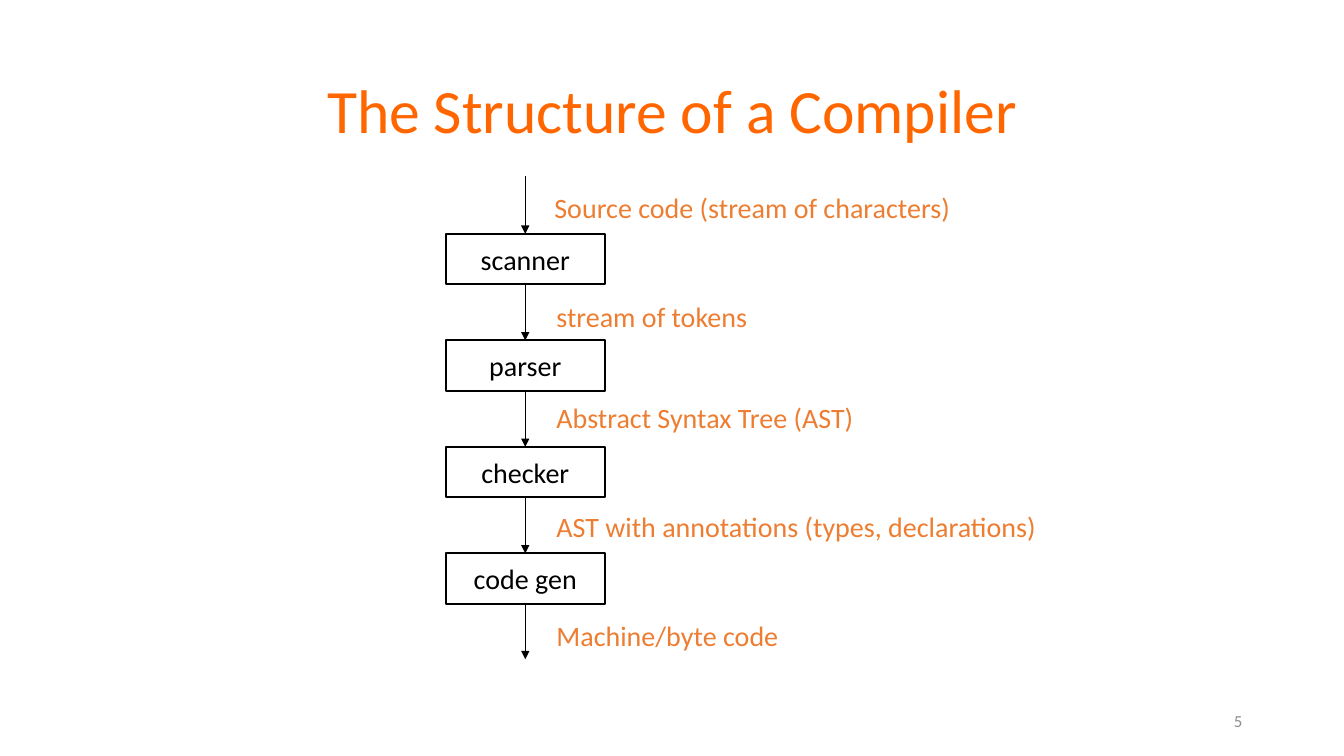
from lxml import etree
from pptx import Presentation
from pptx.dml.color import RGBColor
from pptx.enum.shapes import MSO_CONNECTOR, MSO_SHAPE
from pptx.enum.text import MSO_ANCHOR, MSO_AUTO_SIZE, PP_ALIGN
from pptx.oxml.ns import qn
from pptx.util import Inches, Pt

LEFT, CENTER, RIGHT = PP_ALIGN.LEFT, PP_ALIGN.CENTER, PP_ALIGN.RIGHT
TOP, MIDDLE = MSO_ANCHOR.TOP, MSO_ANCHOR.MIDDLE
FIT_TEXT = MSO_AUTO_SIZE.SHAPE_TO_FIT_TEXT
RECTANGLE = MSO_SHAPE.RECTANGLE
STRAIGHT = MSO_CONNECTOR.STRAIGHT
TOP_SITE, BOTTOM_SITE = 0, 2

BLACK = RGBColor(0x00, 0x00, 0x00)
TITLE_ORANGE = RGBColor(0xFF, 0x66, 0x00)
LABEL_ORANGE = RGBColor(0xED, 0x7D, 0x31)
GRAY = RGBColor(0x8C, 0x8C, 0x8C)

STAGES = ["scanner", "parser", "checker", "code gen"]
STAGE_LEFT, STAGE_WIDTH, STAGE_HEIGHT = 4.42, 1.58, 0.5
FIRST_TOP, LAST_TOP = 2.32, 5.49
STAGE_PITCH = (LAST_TOP - FIRST_TOP) / (len(STAGES) - 1)
ARROW_X = STAGE_LEFT + STAGE_WIDTH / 2
FLOW_START, FLOW_END = 1.75, 6.54

# Text, left, top, width of the data passed between stages
DATA_LABELS = [
    ("Source code (stream of characters)", 5.4, 1.84, 4.18),
    ("stream of tokens", 5.42, 2.92, 2.13),
    ("Abstract Syntax Tree (AST)", 5.42, 3.92, 3.21),
    ("AST with annotations (types, declarations)", 5.42, 5.01, 5.01),
    ("Machine/byte code", 5.42, 6.09, 2.43),
]
LABEL_HEIGHT = 0.44


class CompilerSlide:
    font_name = "Calibri"

    def __init__(self, page):
        self.page = page

    def fill_text(self, box, text, size, color, align=LEFT, anchor=TOP, wrap=False, spacing=None):
        frame = box.text_frame
        frame.word_wrap = wrap
        frame.vertical_anchor = anchor
        para = frame.paragraphs[0]
        para.alignment = align
        para.line_spacing = spacing
        span = para.add_run()
        span.text = text
        for name, value in {"name": self.font_name, "size": Pt(size)}.items():
            setattr(span.font, name, value)
        span.font.color.rgb = color

    def add_text(self, text, left, top, width, height, **text_format):
        box = self.page.shapes.add_textbox(*map(Inches, (left, top, width, height)))
        self.fill_text(box, text, **text_format)
        return box

    def add_label(self, text, left, top, width):
        box = self.add_text(text, left, top, width, LABEL_HEIGHT, size=20, color=LABEL_ORANGE)
        box.text_frame.auto_size = FIT_TEXT

    def add_stage(self, text, top):
        bounds = (STAGE_LEFT, top, STAGE_WIDTH, STAGE_HEIGHT)
        box = self.page.shapes.add_shape(RECTANGLE, *map(Inches, bounds))
        box.shadow.inherit = False
        box.fill.background()
        box.line.color.rgb = BLACK
        box.line.width = Pt(1.5)
        self.fill_text(box, text, 20, BLACK, align=CENTER, anchor=MIDDLE)
        return box

    def add_arrow(self, source, target):
        """Draw a downward arrow; a missing stage means an end of the flow."""
        arrow = self.page.shapes.add_connector(
            STRAIGHT, *map(Inches, (ARROW_X, FLOW_START, ARROW_X, FLOW_END)))
        if source is not None:
            arrow.begin_connect(source, BOTTOM_SITE)
        if target is not None:
            arrow.end_connect(target, TOP_SITE)
        arrow.line.color.rgb = BLACK
        arrow.line.width = Pt(1)
        properties = arrow._element.spPr
        etree.SubElement(properties.find(qn("a:ln")), qn("a:tailEnd"), type="triangle")
        etree.SubElement(properties, qn("a:effectLst"))


def main():
    deck = Presentation()
    deck.slide_width, deck.slide_height = Inches(13.33), Inches(7.5)
    slide = CompilerSlide(deck.slides.add_slide(deck.slide_layouts[6]))

    slide.add_text("The Structure of a Compiler", 0.92, 0.4, 11.5, 1.45, size=44,
                   color=TITLE_ORANGE, align=CENTER, anchor=MIDDLE, wrap=True, spacing=0.9)
    slide.add_text("5", 9.42, 6.95, 3, 0.4, size=12,
                   color=GRAY, align=RIGHT, anchor=MIDDLE, wrap=True)

    stages = [slide.add_stage(name, FIRST_TOP + index * STAGE_PITCH)
              for index, name in enumerate(STAGES)]
    for source, target in zip([None, *stages], [*stages, None]):
        slide.add_arrow(source, target)
    for label in DATA_LABELS:
        slide.add_label(*label)

    deck.save("out.pptx")


if __name__ == "__main__":
    main()
